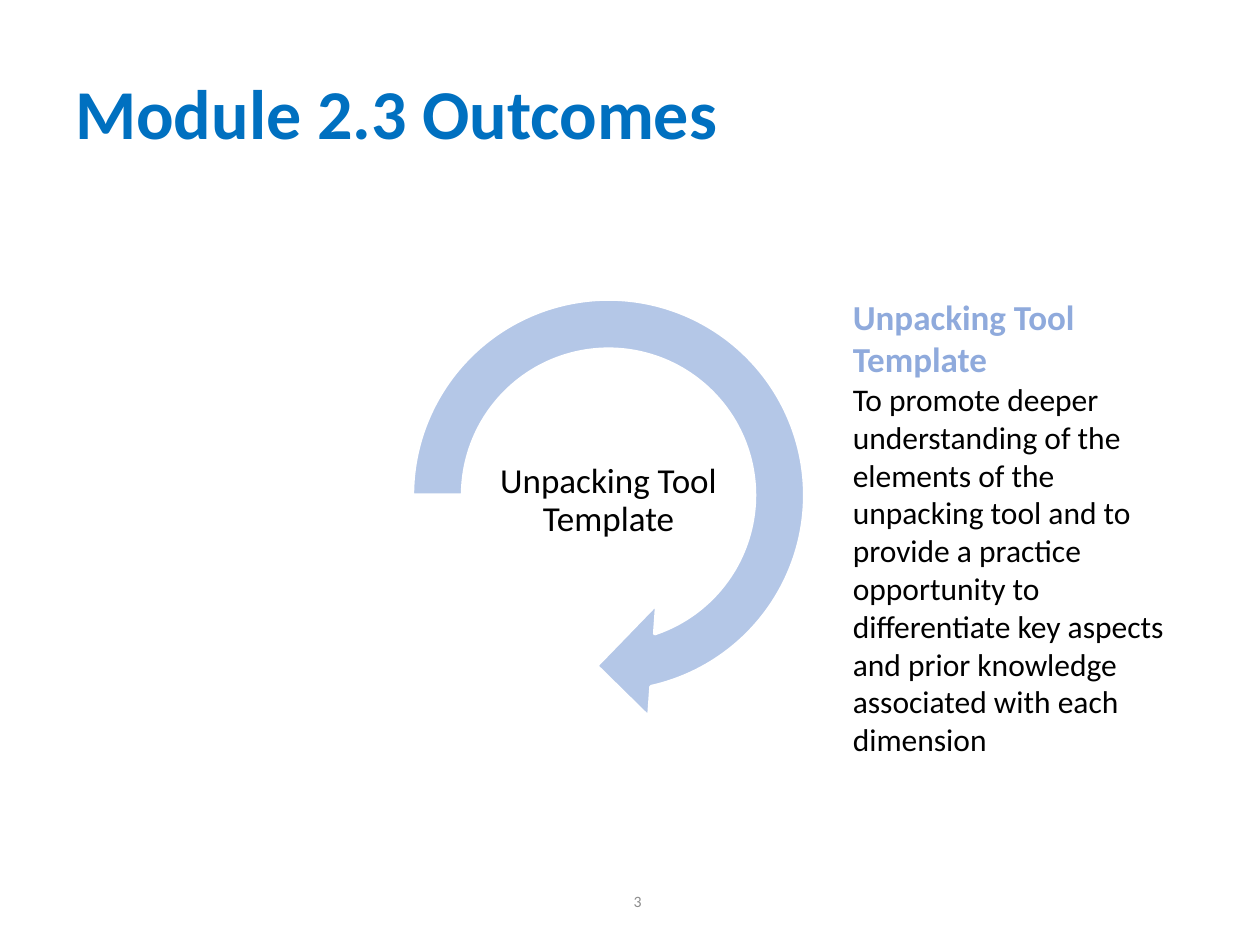
from pptx import Presentation
from pptx.dml.color import RGBColor
from pptx.enum import shapes, text
from pptx.util import Inches, Pt

BLUE = RGBColor(0x00, 0x70, 0xC0)
PALE = RGBColor(0xB4, 0xC7, 0xE7)
SOFT = RGBColor(0x8F, 0xAA, 0xDC)
GRAY = RGBColor(0x8C, 0x8C, 0x8C)
BLACK = RGBColor(0, 0, 0)
WHITE = RGBColor(0xFF, 0xFF, 0xFF)
LEFT, MID, RIGHT = text.PP_ALIGN.LEFT, text.PP_ALIGN.CENTER, text.PP_ALIGN.RIGHT
TOP, CENTER = text.MSO_ANCHOR.TOP, text.MSO_ANCHOR.MIDDLE
TOOL = "Unpacking Tool Template"
GOAL = (
    "To promote deeper understanding of the elements of the unpacking tool "
    "and to provide a practice opportunity to differentiate key aspects and "
    "prior knowledge associated with each dimension"
)


def add_text(slide, area, lines, align=LEFT, anchor=CENTER, space=1.0, inset=None):
    """Add a text box whose lines are (words, size, color, bold)."""
    frame = slide.shapes.add_textbox(*map(Inches, area)).text_frame
    frame.word_wrap = True
    frame.vertical_anchor = anchor
    if inset is not None:
        frame.margin_left = frame.margin_right = Inches(inset)
        frame.margin_top = frame.margin_bottom = Inches(inset)
    for i, (words, size, color, bold) in enumerate(lines):
        para = frame.add_paragraph() if i else frame.paragraphs[0]
        para.text = words
        para.alignment = align
        para.line_spacing = space
        font = para.font
        font.name, font.size, font.bold = "Calibri", Pt(size), bold
        font.color.rgb = color


def add_loop(slide, area):
    """Add the circular arrow."""
    loop = slide.shapes.add_shape(
        shapes.MSO_SHAPE.CIRCULAR_ARROW, *map(Inches, area)
    )
    for i, value in enumerate((0.11, 11.42, 45, 108, 0.125)):
        loop.adjustments[i] = value
    loop.shadow.inherit = False
    loop.fill.solid()
    loop.fill.fore_color.rgb = PALE
    loop.line.color.rgb = WHITE
    loop.line.width = Pt(2)


def main():
    """Build and save the slide."""
    deck = Presentation()
    deck.slide_width, deck.slide_height = Inches(10), Inches(7.5)
    slide = deck.slides.add_slide(deck.slide_layouts[6])
    add_text(slide, (2.94, 6.95, 2.25, 0.4), [("3", 9, GRAY, False)], RIGHT)
    add_text(slide, (0.5, 0.3, 9, 1.25),
             [("Module 2.3 Outcomes", 40, BLUE, True)], space=0.9)
    add_loop(slide, (3.02, 2.12, 3.62, 3.62))
    add_text(slide, (3.82, 3.47, 2.02, 1.01), [(TOOL, 20, BLACK, False)],
             MID, space=0.9, inset=0.01)
    add_text(slide, (6.67, 2.3, 2.79, 3.8),
             [(TOOL, 20, SOFT, True), (GOAL, 18, BLACK, False)], anchor=TOP)
    deck.save("out.pptx")


if __name__ == "__main__":
    main()
